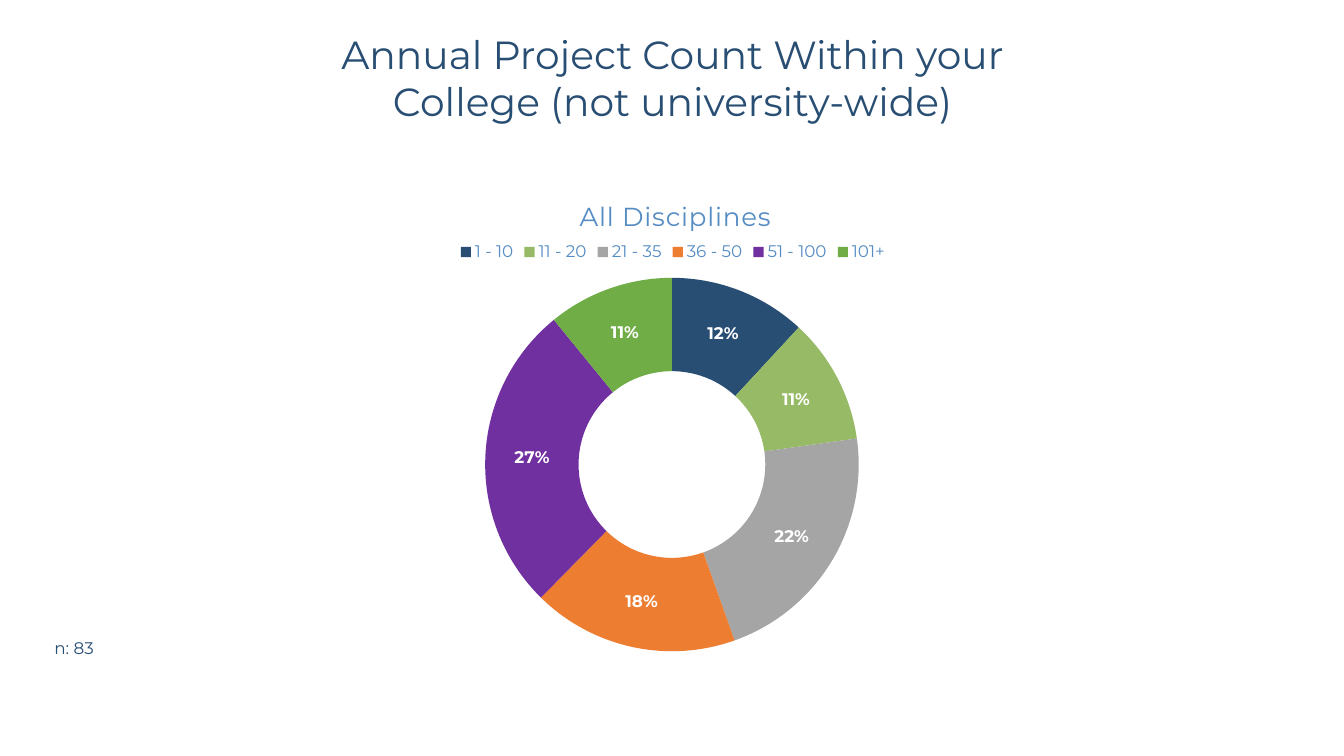
from dataclasses import dataclass

from lxml.etree import _Element
from pptx import Presentation
from pptx.chart.chart import Chart
from pptx.chart.data import CategoryChartData
from pptx.dml.color import RGBColor
from pptx.enum.chart import XL_CHART_TYPE, XL_LEGEND_POSITION
from pptx.enum.text import PP_ALIGN
from pptx.oxml import parse_xml
from pptx.oxml.ns import nsdecls, qn
from pptx.slide import Slide
from pptx.text.text import Font
from pptx.util import Inches, Pt


@dataclass(frozen=True)
class Theme:
    face: str = "Montserrat"
    navy: str = "294E73"
    blue: str = "558CC3"
    white: str = "FFFFFF"
    head: float = 28
    title: float = 18.6
    base: float = 10
    small: float = 12


@dataclass(frozen=True)
class Band:
    label: str
    share: int
    color: str


THEME = Theme()
BANDS = [
    Band("1 - 10", 12, THEME.navy),
    Band("11 - 20", 11, "96BA65"),
    Band("21 - 35", 22, "A5A5A5"),
    Band("36 - 50", 18, "ED7D31"),
    Band("51 - 100", 27, "7030A0"),
    Band("101+", 11, "70AD47"),
]


def style(font: Font, size: float, color: str, bold: bool = False) -> None:
    """Set the face, size, colour and weight of a font."""
    font.name = THEME.face
    font.size = Pt(size)
    font.bold = bold
    font.color.rgb = RGBColor.from_string(color)


def write(slide: Slide, text: str, *, left: float, top: float, width: float,
          height: float, size: float, color: str = THEME.navy) -> None:
    """Add a centred, wrapping text box."""
    box = slide.shapes.add_textbox(
        Inches(left), Inches(top), Inches(width), Inches(height))
    box.text_frame.word_wrap = True
    line = box.text_frame.paragraphs[0]
    line.alignment = PP_ALIGN.CENTER
    run = line.add_run()
    run.text = text
    style(run.font, size, color)


def place(part: _Element, index: int, inner: bool = False, **sides: float) -> None:
    """Pin a chart part at fractions of the chart area."""
    for old in part.findall(qn("c:layout")):
        part.remove(old)
    target = '<c:layoutTarget val="inner"/>' if inner else ""
    modes = "".join(f'<c:{side}Mode val="edge"/>' for side in "xy")
    sizes = "".join(f'<c:{side} val="{value}"/>' for side, value in sides.items())
    part.insert(index, parse_xml(
        f'<c:layout {nsdecls("c")}><c:manualLayout>{target}{modes}{sizes}'
        '</c:manualLayout></c:layout>'))


def label(chart: Chart) -> None:
    """Add the chart title and the legend."""
    frame = chart.chart_title.text_frame
    run = frame.paragraphs[0].add_run()
    run.text = "All Disciplines"
    style(run.font, THEME.title, THEME.blue)
    run.font._element.set("spc", "50")
    chart.chart_title.include_in_layout = False
    place(chart.chart_title._element, 1, x=0.37, y=0.05)
    chart.has_legend = True
    chart.legend.position = XL_LEGEND_POSITION.TOP
    chart.legend.include_in_layout = False
    style(chart.legend.font, THEME.small, THEME.blue)
    place(chart.legend._element, 1, x=0.21, y=0.14)


def draw(slide: Slide, bands: list[Band]) -> None:
    """Add the doughnut chart of the bands."""
    data = CategoryChartData()
    data.categories = [band.label for band in bands]
    data.add_series("Series 1", [band.share for band in bands])
    chart = slide.shapes.add_chart(
        XL_CHART_TYPE.DOUGHNUT, Inches(2.96), Inches(1.67),
        Inches(7.41), Inches(4.94), data).chart
    style(chart.font, THEME.base, THEME.navy)
    label(chart)
    plot = chart.plots[0]
    plot.vary_by_categories = True
    place(plot._element.getparent(), 0, inner=True, x=0.25, y=0.22, w=0.5, h=0.75)
    ring = plot.series[0]
    for index, band in enumerate(bands):
        fill = ring.points[index].format.fill
        fill.solid()
        fill.fore_color.rgb = RGBColor.from_string(band.color)
    tags = ring.data_labels
    tags.show_percentage = True
    tags.show_value = False
    tags.number_format = "0%"
    tags.number_format_is_linked = False
    style(tags.font, THEME.small, THEME.white, bold=True)


def main() -> None:
    """Build and save the slide."""
    deck = Presentation()
    deck.slide_width = Inches(13.33)
    deck.slide_height = Inches(7.5)
    slide = deck.slides.add_slide(deck.slide_layouts[6])
    write(slide, "Annual Project Count Within your College (not university-wide)",
          left=2.55, top=0.25, width=8.24, height=1.04, size=THEME.head)
    draw(slide, BANDS)
    write(slide, "n: 83", left=0.19, top=6.28, width=1.09, height=0.3,
          size=THEME.small)
    deck.save("out.pptx")


if __name__ == "__main__":
    main()
